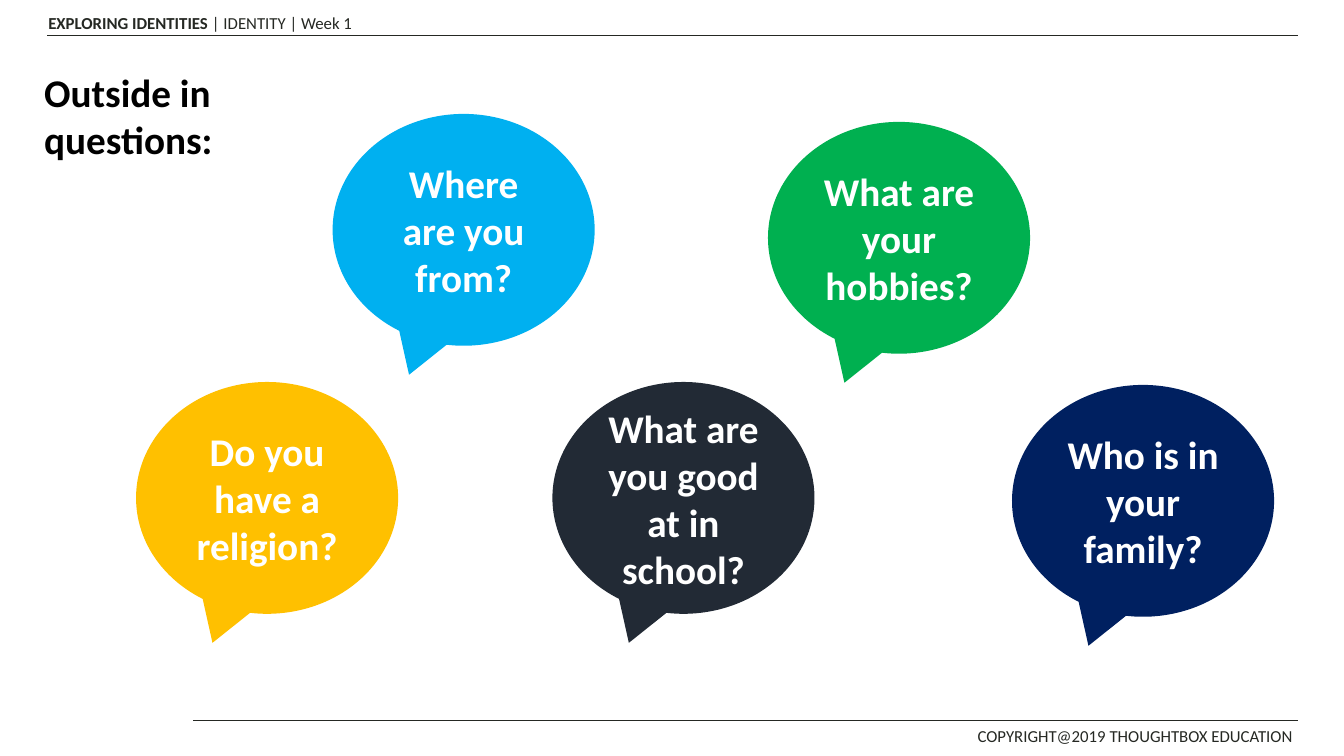
import pptx
import pptx.dml.color
import pptx.enum.shapes
import pptx.enum.text
import pptx.util
from dataclasses import dataclass

Pt = pptx.util.Pt
SHAPE = pptx.enum.shapes.MSO_SHAPE
ANCHOR = pptx.enum.text.MSO_ANCHOR
ALIGN = pptx.enum.text.PP_ALIGN


@dataclass(frozen=True)
class Theme:
    font: str = "Calibri"
    small: int = 12
    large: int = 28
    ink: str = "252823"
    black: str = "000000"
    white: str = "FFFFFF"
    sky: str = "00B0F0"
    navy: str = "002060"
    green: str = "00B050"
    amber: str = "FFC000"
    slate: str = "222A35"


def rgb(value):
    return pptx.dml.color.RGBColor.from_string(value)


def write(para, text, *, font, size, color, bold=False):
    """Add one formatted span to a paragraph."""
    span = para.add_run()
    span.text = text
    span.font.name = font
    span.font.size = Pt(size)
    span.font.bold = bold
    span.font.color.rgb = rgb(color)


class Page:
    """Holds the theme and the current slide."""

    def __init__(self, slide, theme):
        self.slide = slide
        self.theme = theme

    def text(self, spans, left, top, width, height, size, color, wrap=True):
        box = self.slide.shapes.add_textbox(Pt(left), Pt(top), Pt(width), Pt(height))
        box.text_frame.word_wrap = wrap
        for words, bold in spans:
            write(box.text_frame.paragraphs[0], words, font=self.theme.font,
                  size=size, color=color, bold=bold)

    def rule(self, left, right, y):
        line = self.slide.shapes.add_connector(
            pptx.enum.shapes.MSO_CONNECTOR.STRAIGHT, Pt(left), Pt(y), Pt(right), Pt(y))
        line.line.color.rgb = rgb(self.theme.ink)
        line.line.width = Pt(1)
        properties = line._element.spPr
        properties.append(pptx.oxml.parse_xml(
            '<a:effectLst xmlns:a="http://schemas.openxmlformats.org/drawingml/2006/main"/>'))

    def bubble(self, question, left, top, fill):
        shape = self.slide.shapes.add_shape(
            SHAPE.OVAL_CALLOUT, Pt(left), Pt(top), Pt(187.2), Pt(165.6))
        shape.shadow.inherit = False
        shape.fill.solid()
        shape.fill.fore_color.rgb = rgb(fill)
        shape.line.fill.background()
        frame = shape.text_frame
        frame.word_wrap = True
        frame.vertical_anchor = ANCHOR.MIDDLE
        para = frame.paragraphs[0]
        para.alignment = ALIGN.CENTER
        write(para, question, font=self.theme.font, size=self.theme.large,
              color=self.theme.white, bold=True)


def main():
    theme = Theme()
    deck = pptx.Presentation()
    deck.slide_width, deck.slide_height = Pt(960), Pt(540)
    page = Page(deck.slides.add_slide(deck.slide_layouts[6]), theme)

    # Header and footer
    page.text([("EXPLORING IDENTITIES ", True), ("| IDENTITY | Week 1", False)],
              27.4, 5.8, 233.3, 21.6, theme.small, theme.ink, wrap=False)
    page.rule(33.8, 927.4, 25.2)
    page.text([("COPYRIGHT@2019 THOUGHTBOX EDUCATION", False)],
              691.2, 514.8, 244.8, 22.3, theme.small, theme.ink)
    page.rule(138.2, 927.4, 514.8)

    # Question bubbles
    for question, left, top, fill in (
        ("Where are you from?", 237.6, 81.4, theme.sky),
        ("Who is in your family?", 722.9, 275, theme.navy),
        ("What are your hobbies?", 548.6, 87.1, theme.green),
        ("Do you have a religion?", 97.2, 272.9, theme.amber),
        ("What are you good at in school?", 394.6, 272.9, theme.slate),
    ):
        page.bubble(question, left, top, fill)

    # Title
    page.text([("Outside in questions:", True)],
              24.5, 45.4, 160, 75, theme.large, theme.black)

    deck.save("out.pptx")


if __name__ == "__main__":
    main()
